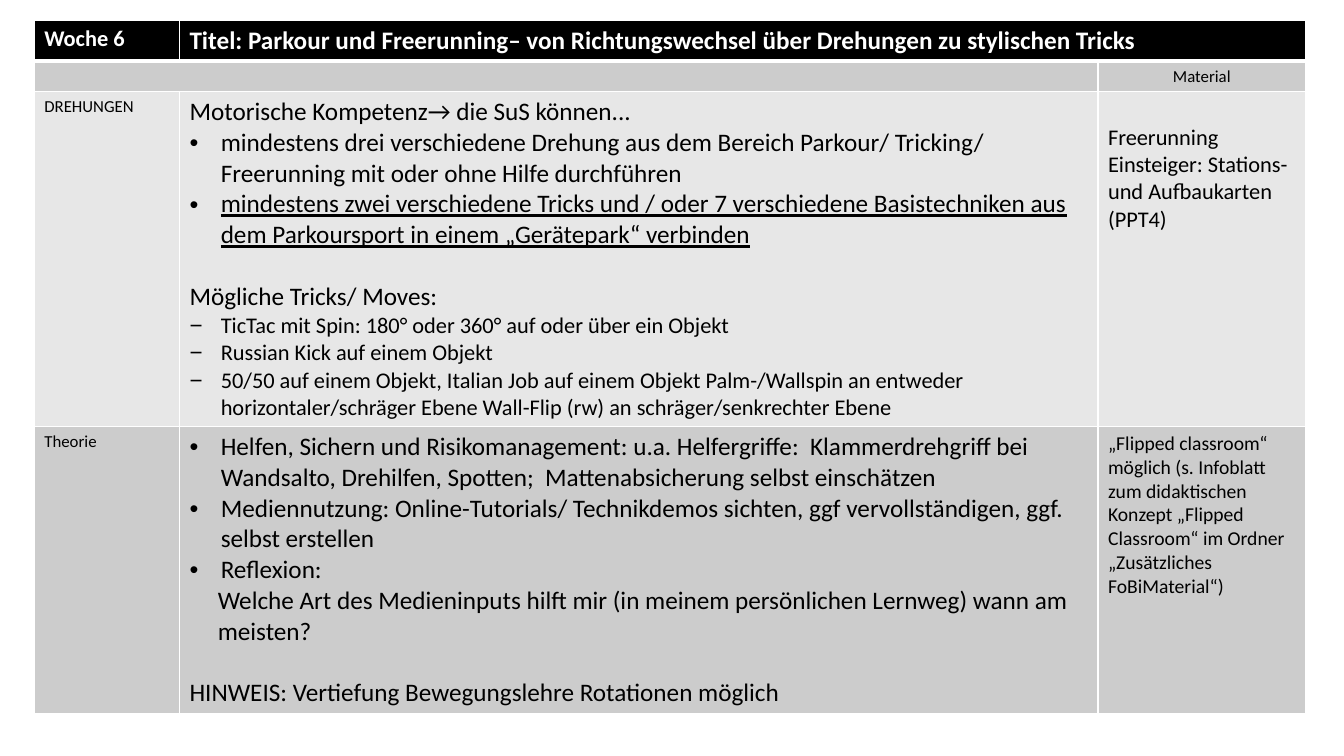
from lxml import etree
from pptx import Presentation
from pptx.dml.color import RGBColor
from pptx.enum.text import PP_ALIGN
from pptx.oxml.ns import qn
from pptx.util import Inches, Pt

LEFT, CENTER = PP_ALIGN.LEFT, PP_ALIGN.CENTER
BLACK = RGBColor(0x00, 0x00, 0x00)
WHITE = RGBColor(0xFF, 0xFF, 0xFF)
GREY = RGBColor(0xCC, 0xCC, 0xCC)
LIGHT = RGBColor(0xE7, 0xE7, 0xE7)

FONT = "Calibri"
BOX = (0.34, 0.2)
COL_WIDTHS = (1.44, 9.11, 2.06)
ROW_HEIGHTS = (0.4, 0.3, 3.32, 2.85)
ROW_FILLS = (BLACK, GREY, LIGHT, GREY)
HANGING = 0.31
GAP = 22

HEADER = {"bold": True, "color": WHITE}
DOT = {"bullet": "•", "indent": HANGING}
DASH = {"bullet": "−", "indent": HANGING, "size": 16}

CELLS = {
    (0, 0): [("Woche 6", {**HEADER, "size": 16})],
    (0, 1): [("Titel: Parkour und Freerunning– von Richtungswechsel über "
              "Drehungen zu stylischen Tricks", HEADER)],
    (1, 2): [("Material", {"size": 12, "align": CENTER})],
    (2, 0): [("DREHUNGEN", {"size": 12})],
    (2, 1): [
        ("Motorische Kompetenz→ die SuS können...", {}),
        ("mindestens drei verschiedene Drehung aus dem Bereich Parkour/ "
         "Tricking/ Freerunning mit oder ohne Hilfe durchführen", DOT),
        ("mindestens zwei verschiedene Tricks und / oder 7 verschiedene "
         "Basistechniken aus dem Parkoursport in einem „Gerätepark“ verbinden",
         {**DOT, "underline": True}),
        ("Mögliche Tricks/ Moves:", {"before": GAP}),
        ("TicTac mit Spin: 180° oder 360° auf oder über ein Objekt", DASH),
        ("Russian Kick auf einem Objekt", DASH),
        ("50/50 auf einem Objekt, Italian Job auf einem Objekt "
         "Palm-/Wallspin an entweder horizontaler/schräger Ebene Wall-Flip "
         "(rw) an schräger/senkrechter Ebene", DASH),
    ],
    (2, 2): [("Freerunning Einsteiger: Stations- und Aufbaukarten (PPT4)",
              {"size": 16})],
    (3, 0): [("Theorie", {"size": 12})],
    (3, 1): [
        ("Helfen, Sichern und Risikomanagement: u.a. Helfergriffe:  "
         "Klammerdrehgriff bei Wandsalto, Drehilfen, Spotten;  "
         "Mattenabsicherung selbst einschätzen", DOT),
        ("Mediennutzung: Online-Tutorials/ Technikdemos sichten, ggf "
         "vervollständigen, ggf. selbst erstellen", DOT),
        ("Reflexion:", DOT),
        ("Welche Art des Medieninputs hilft mir (in meinem persönlichen "
         "Lernweg) wann am meisten?", {"indent": 0.28}),
        ("HINWEIS: Vertiefung Bewegungslehre Rotationen möglich",
         {"before": GAP}),
    ],
    (3, 2): [("„Flipped classroom“ möglich (s. Infoblatt zum didaktischen "
              "Konzept „Flipped Classroom“ im Ordner „Zusätzliches "
              "FoBiMaterial“)", {"size": 14})],
}


def set_indent(p, indent, bullet):
    """Set the left margin and, with a bullet, the hanging first line."""
    pPr = p._p.get_or_add_pPr()
    pPr.set("marL", str(Inches(indent)))
    if bullet:
        pPr.set("indent", str(-Inches(indent)))
        etree.SubElement(pPr, qn("a:buFont"), typeface="Arial")
        etree.SubElement(pPr, qn("a:buChar"), char=bullet)


def fill_text(tf, paragraphs):
    """Write formatted paragraphs into a text frame."""
    for i, (text, fmt) in enumerate(paragraphs):
        p = tf.paragraphs[0] if i == 0 else tf.add_paragraph()
        p.alignment = fmt.get("align", LEFT)
        if "before" in fmt:
            p.space_before = Pt(fmt["before"])
        if "indent" in fmt:
            set_indent(p, fmt["indent"], fmt.get("bullet"))
        r = p.add_run()
        r.text = text
        values = {"name": FONT, "size": Pt(fmt.get("size", 18)),
                  "bold": fmt.get("bold", False),
                  "underline": fmt.get("underline", False)}
        for key, value in values.items():
            setattr(r.font, key, value)
        r.font.color.rgb = fmt.get("color", BLACK)


def style_cell(cell, row):
    """Give a cell white borders and the fill of its row."""
    tcPr = cell._tc.get_or_add_tcPr()
    widths = {"L": 1, "R": 1, "T": 3 if row == 1 else 1, "B": 3 if row == 0 else 1}
    for side, width in widths.items():
        ln = etree.SubElement(tcPr, qn(f"a:ln{side}"), w=str(Pt(width)))
        fill = etree.SubElement(ln, qn("a:solidFill"))
        etree.SubElement(fill, qn("a:srgbClr"), val=str(WHITE))
    cell.fill.solid()
    cell.fill.fore_color.rgb = ROW_FILLS[row]


def add_plan(slide, left, top):
    """Place the lesson plan table with its top left corner at the given point."""
    table = slide.shapes.add_table(
        len(ROW_HEIGHTS), len(COL_WIDTHS), Inches(left), Inches(top),
        Inches(sum(COL_WIDTHS)), Inches(sum(ROW_HEIGHTS))).table
    table.horz_banding = False
    for column, width in zip(table.columns, COL_WIDTHS):
        column.width = Inches(width)
    for i, height in enumerate(ROW_HEIGHTS):
        table.rows[i].height = Inches(height)
        for j in range(len(COL_WIDTHS)):
            cell = table.cell(i, j)
            style_cell(cell, i)
            if (i, j) in CELLS:
                fill_text(cell.text_frame, CELLS[i, j])
            else:
                p = cell.text_frame.paragraphs[0]
                etree.SubElement(p._p, qn("a:endParaRPr"), sz="1200")
    table.cell(0, 1).merge(table.cell(0, 2))
    table.cell(1, 0).merge(table.cell(1, 1))
    table.cell(2, 2).margin_top = Inches(0.32)


def main():
    """Build the slide and save it."""
    prs = Presentation()
    prs.slide_width, prs.slide_height = Inches(13.33), Inches(7.5)
    slide = prs.slides.add_slide(prs.slide_layouts[6])
    add_plan(slide, *BOX)
    prs.save("out.pptx")


if __name__ == "__main__":
    main()
